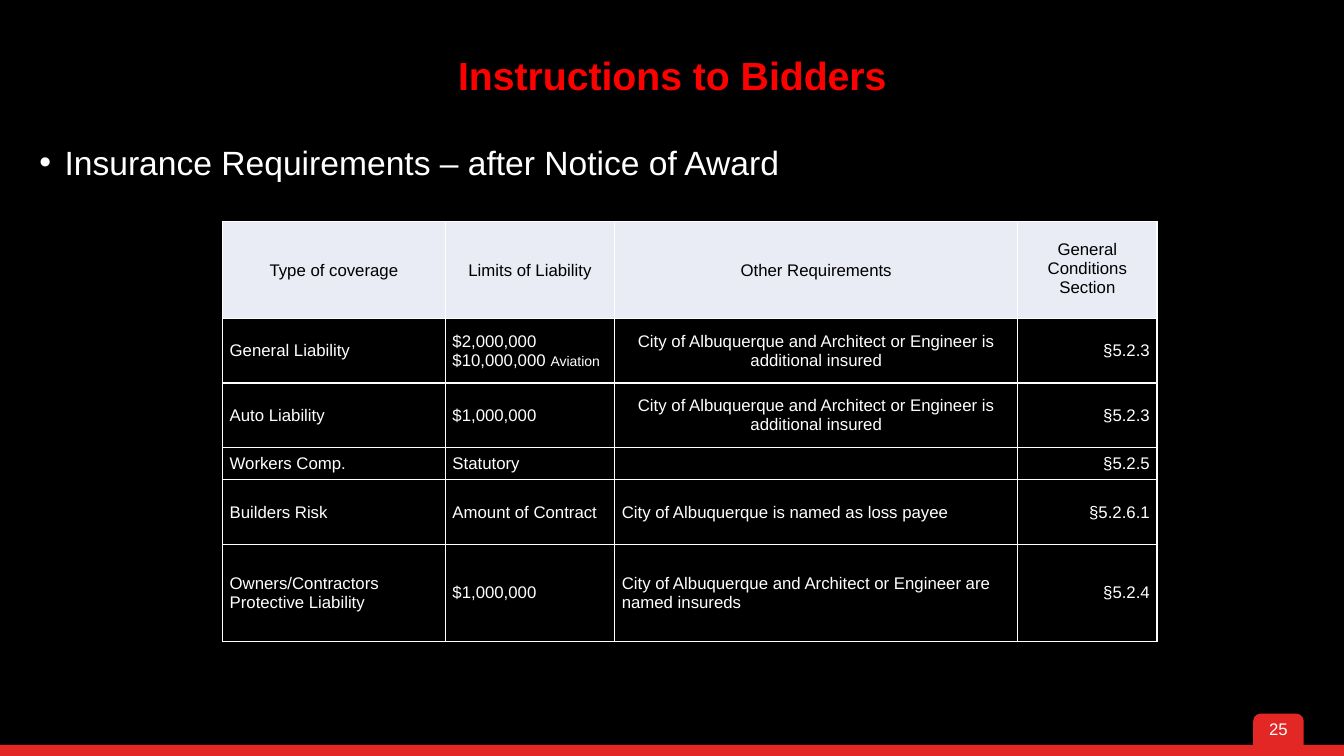
from dataclasses import dataclass

from lxml.etree import SubElement as Sub
from pptx import Presentation
from pptx.dml.color import RGBColor as Rgb
from pptx.enum.shapes import MSO_SHAPE as Kind
from pptx.enum.text import MSO_ANCHOR as Anchor, PP_ALIGN as Align
from pptx.oxml.ns import qn
from pptx.util import Emu, Inches, Pt


@dataclass(frozen=True)
class Theme:
    font: str = "Arial"
    black: str = "000000"
    white: str = "FFFFFF"
    title: str = "FF0000"
    red: str = "E22725"
    head: str = "E9EBF5"
    big: int = 28
    lead: int = 24
    base: int = 12
    small: int = 10


T = Theme()
WIDE, HIGH = Inches(13.333), Inches(7.5)
LEFT, MID, RIGHT = Align.LEFT, Align.CENTER, Align.RIGHT

# Table grid: widths in percent of the slide, heights in row units
COLS = [16.58, 12.6, 30, 10.35]
ROWS = [3, 2, 2, 1, 2, 3]
UNIT = 4.27
HEADS = ["Type of coverage", "Limits of Liability", "Other Requirements",
         "General Conditions Section"]
ADDED = "City of Albuquerque and Architect or Engineer is additional insured"
# Each row: coverage, limit, other needs, their alignment, section
DATA = [
    ("General Liability",
     [["$2,000,000"], ["$10,000,000 ", ("Aviation", T.small)]],
     ADDED, MID, "§5.2.3"),
    ("Auto Liability", "$1,000,000", ADDED, MID, "§5.2.3"),
    ("Workers Comp.", "Statutory", "", LEFT, "§5.2.5"),
    ("Builders Risk", "Amount of Contract",
     "City of Albuquerque is named as loss payee", LEFT, "§5.2.6.1"),
    ("Owners/Contractors Protective Liability", "$1,000,000",
     "City of Albuquerque and Architect or Engineer are named insureds",
     LEFT, "§5.2.4"),
]


def wide(share):
    return Emu(round(WIDE * share / 100))


def high(share):
    return Emu(round(HIGH * share / 100))


def place(x, y, w, h):
    return wide(x), high(y), wide(w), high(h)


def add_run(para, text, size, color, bold=False):
    run = para.add_run()
    run.text = text
    font = run.font
    font.name, font.size, font.bold = T.font, Pt(size), bold
    font.color.rgb = Rgb.from_string(color)


def add_bar(slide, kind, *spot):
    bar = slide.shapes.add_shape(kind, *place(*spot))
    bar.shadow.inherit = False
    bar.fill.solid()
    bar.fill.fore_color.rgb = Rgb.from_string(T.red)
    bar.line.fill.background()
    return bar


def add_text(slide, spot, text, size, color, align=MID, bold=False):
    frame = slide.shapes.add_textbox(*place(*spot)).text_frame
    frame.word_wrap = True
    frame.vertical_anchor = Anchor.MIDDLE
    para = frame.paragraphs[0]
    para.alignment = align
    add_run(para, text, size, color, bold)
    return frame


def add_point(slide, spot, text):
    frame = add_text(slide, spot, text, T.lead, T.white, LEFT)
    frame.vertical_anchor = Anchor.TOP
    frame.margin_left = frame.margin_right = 0
    frame.margin_top = frame.margin_bottom = 0
    para = frame.paragraphs[0]
    para.line_spacing, para.space_after = 0.9, Pt(12)
    props = para._p.get_or_add_pPr()
    props.set("marL", str(Inches(0.25)))
    props.set("indent", str(-Inches(0.25)))
    Sub(props, qn("a:buFont"), typeface=T.font)
    Sub(props, qn("a:buChar"), char="•")


def add_edges(cell):
    props = cell._tc.get_or_add_tcPr()
    for spot, side in enumerate(("lnL", "lnR", "lnT", "lnB")):
        line = props.makeelement(qn(f"a:{side}"), {"w": str(Pt(1))})
        fill = Sub(line, qn("a:solidFill"))
        Sub(fill, qn("a:srgbClr"), val=T.white)
        props.insert(spot, line)


def fill_cell(cell, text, align, color, fill=None):
    cell.margin_left = cell.margin_right = wide(0.53)
    cell.margin_top = cell.margin_bottom = 0
    cell.vertical_anchor = Anchor.MIDDLE
    if fill:
        cell.fill.solid()
        cell.fill.fore_color.rgb = Rgb.from_string(fill)
    else:
        cell.fill.background()
    add_edges(cell)
    lines = [[text]] if isinstance(text, str) else text
    frame = cell.text_frame
    for row, parts in enumerate(lines):
        para = frame.add_paragraph() if row else frame.paragraphs[0]
        para.alignment = align
        for part in parts:
            words, size = (part, T.base) if isinstance(part, str) else part
            if words:
                add_run(para, words, size, color)


def add_grid(slide):
    spot = place(16.56, 29.33, sum(COLS), UNIT * sum(ROWS))
    grid = slide.shapes.add_table(len(ROWS), len(COLS), *spot).table
    grid.first_row = grid.horz_banding = False
    for col, share in zip(grid.columns, COLS):
        col.width = wide(share)
    for row, units in zip(grid.rows, ROWS):
        row.height = high(UNIT * units)
    for col, text in enumerate(HEADS):
        fill_cell(grid.cell(0, col), text, MID, T.black, T.head)
    # The last heading hangs one line below the top
    last = grid.cell(0, len(COLS) - 1)
    last.vertical_anchor, last.margin_top = Anchor.TOP, high(2.5)
    for row, (cover, limit, other, align, part) in enumerate(DATA, 1):
        texts = (cover, limit, other, part)
        sides = (LEFT, LEFT, align, RIGHT)
        for col, (text, side) in enumerate(zip(texts, sides)):
            fill_cell(grid.cell(row, col), text, side, T.white)


def main():
    deck = Presentation()
    deck.slide_width, deck.slide_height = WIDE, HIGH
    slide = deck.slides.add_slide(deck.slide_layouts[6])
    slide.background.fill.solid()
    slide.background.fill.fore_color.rgb = Rgb.from_string(T.black)

    # Footer: page tab and base bar
    tab = add_bar(slide, Kind.ROUND_2_SAME_RECTANGLE, 93.25, 94.4, 3.75, 4.13)
    tab.adjustments[0] = 0.23
    add_text(slide, (93.1, 94.4, 4.05, 4), "25", T.base, T.white)
    add_bar(slide, Kind.RECTANGLE, 0, 98.53, 100, 1.47)

    # Title and lead point
    title = add_text(slide, (2.93, 5.33, 94.2, 10), "Instructions to Bidders",
                     T.big, T.title, bold=True)
    title.paragraphs[0].line_spacing = 0.9
    add_point(slide, (2.93, 19.33, 94.2, 8.27),
              "Insurance Requirements – after Notice of Award")

    # Coverage table
    add_grid(slide)
    deck.save("out.pptx")


if __name__ == "__main__":
    main()
